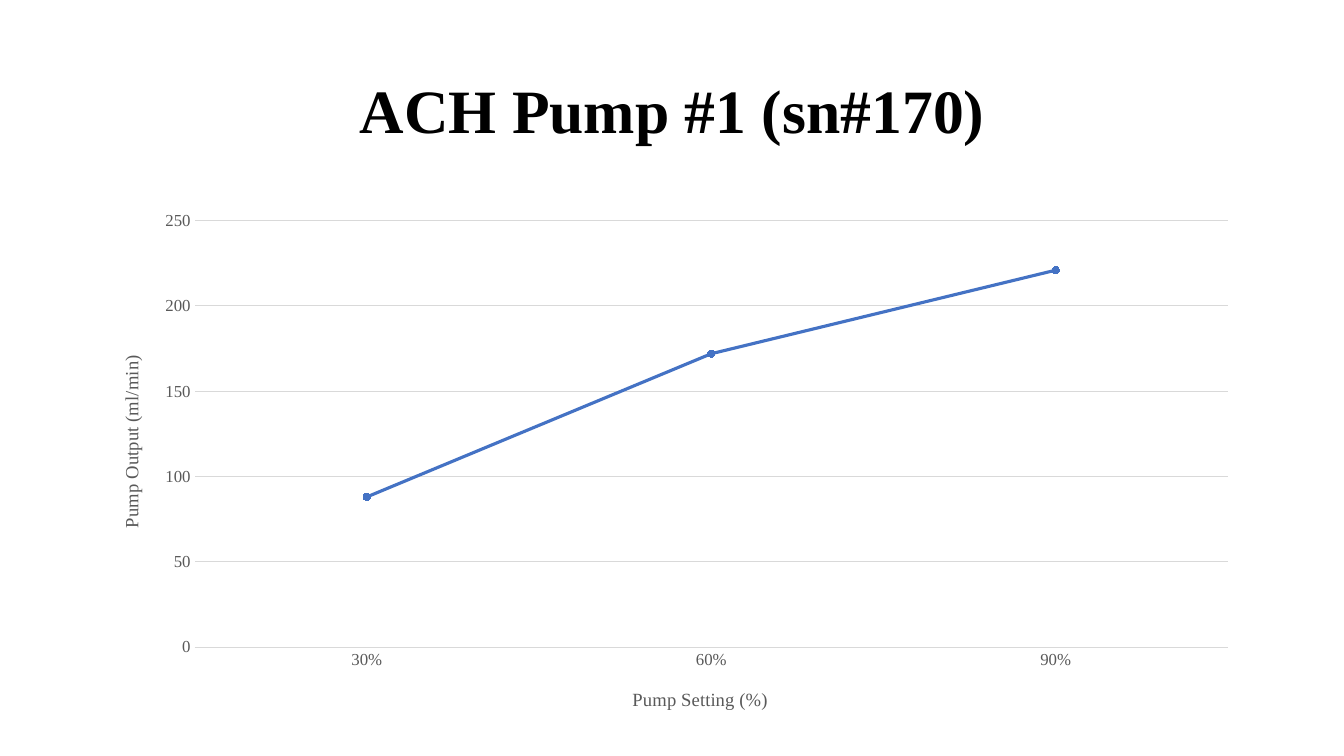
"""Build a slide with a line chart of pump output against pump setting."""
from dataclasses import dataclass

import pptx
import pptx.chart.data
import pptx.dml.color
import pptx.enum.chart
import pptx.enum.text
import pptx.oxml
import pptx.oxml.ns
import pptx.util


@dataclass(frozen=True)
class Theme:
    font: str = "Times New Roman"
    ink: str = "000000"
    label: str = "595959"
    grid: str = "D9D9D9"
    series: str = "4472C4"
    title_size: float = 44
    axis_title_size: float = 13.3
    tick_size: float = 12
    grid_width: float = 0.75
    series_width: float = 2.25


class SlideBuilder:
    def __init__(self, prs, theme):
        self.theme = theme
        self.s = prs.slides.add_slide(prs.slide_layouts[6])

    @staticmethod
    def px(n):
        return pptx.util.Emu(n * 9144)

    def box(self, *lengths):
        return [self.px(n) for n in lengths]

    @staticmethod
    def rgb(value):
        return pptx.dml.color.RGBColor.from_string(value)

    def style_font(self, font, size, color, bold=False):
        font.name = self.theme.font
        font.size = pptx.util.Pt(size)
        font.bold = bold
        font.color.rgb = self.rgb(color)

    def style_line(self, line, color, width):
        line.color.rgb = self.rgb(color)
        line.width = pptx.util.Pt(width)

    def title(self, text, *bounds):
        tf = self.s.shapes.add_textbox(*self.box(*bounds)).text_frame
        tf.word_wrap = True
        tf.vertical_anchor = pptx.enum.text.MSO_ANCHOR.MIDDLE
        p = tf.paragraphs[0]
        p.alignment = pptx.enum.text.PP_ALIGN.CENTER
        p.line_spacing = 0.9
        r = p.add_run()
        r.text = text
        self.style_font(r.font, self.theme.title_size, self.theme.ink, True)

    def place(self, parent, index, size, bounds, inner=False):
        for old in parent.findall(pptx.oxml.ns.qn("c:layout")):
            parent.remove(old)
        values = [n / total for n, total in zip(bounds, size * 2)]
        modes = '<c:xMode val="edge"/><c:yMode val="edge"/>'
        target = '<c:layoutTarget val="inner"/>' if inner else ""
        parts = "".join(f'<c:{k} val="{v:.4f}"/>' for k, v in zip("xywh", values))
        parent.insert(index, pptx.oxml.parse_xml(
            f'<c:layout {pptx.oxml.ns.nsdecls("c")}><c:manualLayout>'
            f"{target}{modes}{parts}</c:manualLayout></c:layout>"))

    def axis(self, axis, text, size, position, number_format, rotation=0):
        tf = axis.axis_title.text_frame
        tf._txBody.bodyPr.set("rot", str(rotation * 60000))
        r = tf.paragraphs[0].add_run()
        r.text = text
        self.style_font(r.font, self.theme.axis_title_size, self.theme.label)
        self.place(axis.axis_title._element, 1, size, position)
        axis.major_tick_mark = pptx.enum.chart.XL_TICK_MARK.NONE
        axis.minor_tick_mark = pptx.enum.chart.XL_TICK_MARK.NONE
        labels = axis.tick_labels
        labels.number_format = number_format
        labels.number_format_is_linked = False
        self.style_font(labels.font, self.theme.tick_size, self.theme.label)

    def line_chart(self, categories, values, x_title, y_title, *bounds):
        data = pptx.chart.data.CategoryChartData()
        data.categories = categories
        data.categories.number_format = "0%"
        data.add_series("Series 1", values)
        chart = self.s.shapes.add_chart(
            pptx.enum.chart.XL_CHART_TYPE.LINE_MARKERS_STACKED,
            *self.box(*bounds), data).chart
        chart.has_title = False
        chart.has_legend = False
        self.style_font(chart.font, self.theme.tick_size, self.theme.label)
        size = bounds[2:]

        x_axis, y_axis = chart.category_axis, chart.value_axis
        self.axis(x_axis, x_title, size, (532, 479), "0%")
        self.axis(y_axis, y_title, size, (23, 149), "General", -90)
        self.style_line(x_axis.format.line, self.theme.grid, self.theme.grid_width)
        y_axis.format.line.fill.background()
        y_axis.minimum_scale, y_axis.maximum_scale, y_axis.major_unit = 0, 250, 50
        y_axis.has_major_gridlines = True
        self.style_line(y_axis.major_gridlines.format.line,
                        self.theme.grid, self.theme.grid_width)

        plot = chart.plots[0]
        plot.vary_by_categories = False
        self.place(plot._element.getparent(), 0, size, (101, 19, 1025, 423), True)
        series = plot.series[0]
        series.smooth = False
        self.style_line(series.format.line, self.theme.series, self.theme.series_width)
        marker = series.marker
        marker.style = pptx.enum.chart.XL_MARKER_STYLE.CIRCLE
        marker.size = 5
        marker.format.fill.solid()
        marker.format.fill.fore_color.rgb = self.rgb(self.theme.series)
        self.style_line(marker.format.line, self.theme.series, self.theme.grid_width)


def main():
    prs = pptx.Presentation()
    prs.slide_width = SlideBuilder.px(1333)
    prs.slide_height = SlideBuilder.px(750)
    slide = SlideBuilder(prs, Theme())
    slide.title("ACH Pump #1 (sn#170)", 92, 40, 1150, 145)
    slide.line_chart((0.3, 0.6, 0.9), (88, 172, 221), "Pump Setting (%)",
                     "Pump Output (ml/min)", 92, 200, 1150, 522)
    prs.save("out.pptx")


if __name__ == "__main__":
    main()
